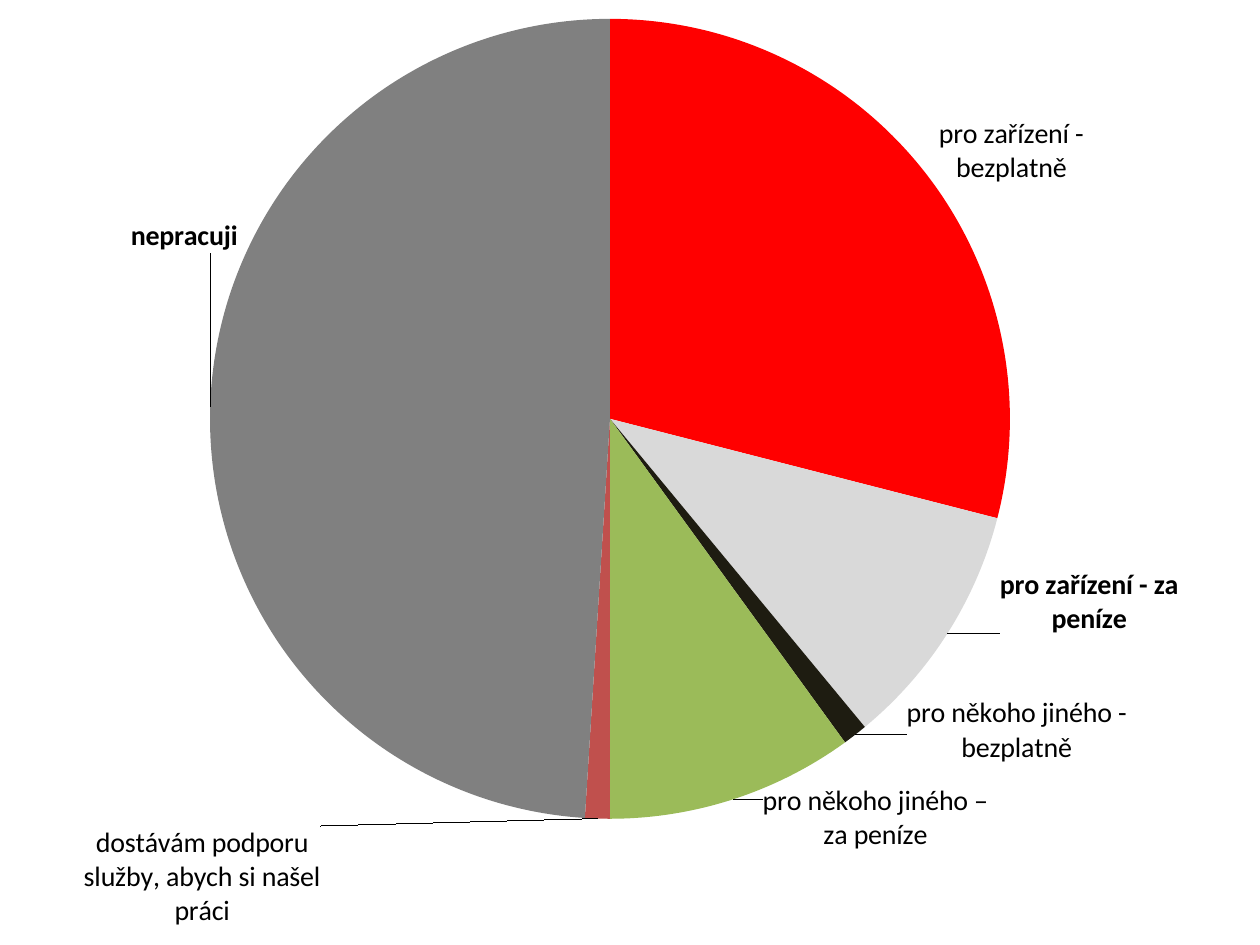
"""Build a slide with one pie chart of where residents work."""
from lxml.etree import SubElement, fromstring
from pptx import Presentation
from pptx.chart.data import CategoryChartData
from pptx.dml.color import RGBColor
from pptx.enum.chart import XL_CHART_TYPE as Kind, XL_LABEL_POSITION as Place
from pptx.oxml.ns import qn
from pptx.util import Pt

WIDE, HIGH, PX = 1260, 945, 7257.6
PLOT = (210, 18, 800, 800)
BLACK = RGBColor(0, 0, 0)
RED = RGBColor(255, 0, 0)
PALE = RGBColor(0xD9, 0xD9, 0xD9)
DARK = RGBColor(0x1E, 0x1C, 0x11)
GREEN = RGBColor(0x9B, 0xBB, 0x59)
BRICK = RGBColor(0xC0, 0x50, 0x4D)
GRAY = RGBColor(0x80, 0x80, 0x80)

SLICES = [
    ("pro zařízení - bezplatně", 29, RED, False, (7, 16)),
    ("pro zařízení - za peníze", 10, PALE, True, (46, -69)),
    ("pro někoho jiného - bezplatně", 1, DARK, False, (47, -44)),
    ("pro někoho jiného – za peníze", 10, GREEN, False, (27, -22)),
    ("dostávám podporu služby, abych si našel práci", 1, BRICK, False, (-395, 0)),
    ("nepracuji", 49, GRAY, True, (35, -170)),
]


def emu(px):
    return round(px * PX)


def layout(**parts):
    root = fromstring('<c:layout xmlns:c="http://schemas.openxmlformats.org/'
                      'drawingml/2006/chart"/>')
    manual = SubElement(root, qn("c:manualLayout"))
    for key, value in parts.items():
        SubElement(manual, qn(f"c:{key}")).set("val", str(value))
    return root


def style(font, size, bold):
    font.name, font.size, font.bold = "Calibri", Pt(size), bold
    font.color.rgb = BLACK


def add_pie(slide):
    data = CategoryChartData()
    data.categories = [row[0] for row in SLICES]
    data.add_series("Series 1", [row[1] for row in SLICES])
    frame = slide.shapes.add_chart(Kind.PIE, 0, emu(1), emu(WIDE), emu(HIGH), data)
    chart = frame.chart
    chart.has_title = chart.has_legend = False
    style(chart.font, 10, False)
    plot = chart.plots[0]
    plot.vary_by_categories = True
    area = chart._chartSpace.chart.plotArea
    for old in area.findall(qn("c:layout")):
        area.remove(old)
    x, y, w, h = (round(n / full, 4) for n, full in zip(PLOT, (WIDE, HIGH) * 2))
    area.insert(0, layout(layoutTarget="inner", xMode="edge", yMode="edge",
                          x=x, y=y, w=w, h=h))
    return plot.series[0]


def label(series):
    labels = series.data_labels
    labels.show_value, labels.show_category_name = False, True
    style(labels.font, 16, True)
    for i, (text, _, color, bold, _) in enumerate(SLICES):
        point = series.points[i]
        point.format.fill.solid()
        point.format.fill.fore_color.rgb = color
        tag = point.data_label
        tag.text_frame.text = text
        style(tag.text_frame.paragraphs[0].runs[0].font, 16, bold)
        tag.position = Place.OUTSIDE_END
    for row, item in zip(SLICES, series._element.iter(qn("c:dLbl"))):
        dx, dy = row[-1]
        item.insert(1, layout(x=round(dx / WIDE, 4), y=round(dy / HIGH, 4)))
        item.find(qn("c:showCatName")).set("val", "1")
        item.find(qn("c:showVal")).set("val", "0")


def main():
    deck = Presentation()
    deck.slide_width, deck.slide_height = emu(WIDE), emu(HIGH)
    label(add_pie(deck.slides.add_slide(deck.slide_layouts[6])))
    deck.save("out.pptx")


if __name__ == "__main__":
    main()
